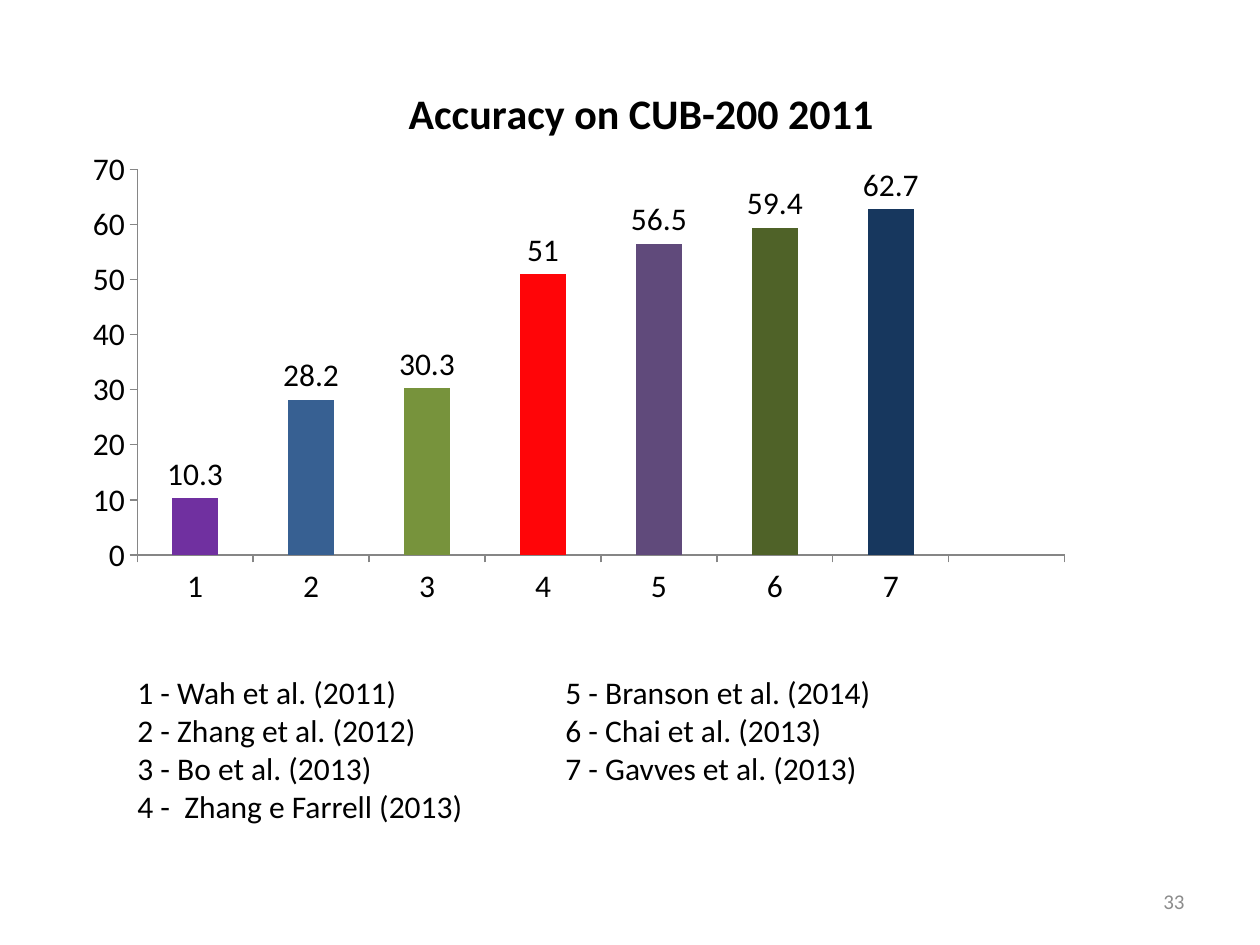
"""Build the slide that compares accuracy on CUB-200 2011."""
from dataclasses import dataclass

from lxml import etree
from pptx import Presentation
from pptx.chart.data import CategoryChartData
from pptx.dml.color import RGBColor
from pptx.enum.chart import XL_CHART_TYPE, XL_LABEL_POSITION, XL_TICK_MARK
from pptx.enum.text import MSO_ANCHOR, PP_ALIGN
from pptx.oxml.ns import qn
from pptx.util import Emu, Pt

COLUMNS = XL_CHART_TYPE.COLUMN_CLUSTERED
OUTSIDE_END = XL_LABEL_POSITION.OUTSIDE_END
TICK_OUT, TICK_NONE = XL_TICK_MARK.OUTSIDE, XL_TICK_MARK.NONE
LEFT, RIGHT = PP_ALIGN.LEFT, PP_ALIGN.RIGHT
TOP, MIDDLE = MSO_ANCHOR.TOP, MSO_ANCHOR.MIDDLE
PX_PER_INCH = 126


@dataclass(frozen=True)
class Theme:
    """Fonts, type sizes and colours of the slide."""
    font: str = "Calibri"
    title: int = 24
    body: int = 18
    small: int = 12
    ink: str = "000000"
    muted: str = "8C8C8C"
    axis: str = "868686"
    bars: tuple = ("7030A0", "376092", "77933C", "FF0508",
                   "604A7B", "4F6228", "17375E")


THEME = Theme()
ACCURACIES = (10.3, 28.2, 30.3, 51, 56.5, 59.4, 62.7)
EARLIER_METHODS = ("1 - Wah et al. (2011)", "2 - Zhang et al. (2012)",
                   "3 - Bo et al. (2013)", "4 -  Zhang e Farrell (2013)")
LATER_METHODS = ("5 - Branson et al. (2014)", "6 - Chai et al. (2013)",
                 "7 - Gavves et al. (2013)")


def px(length):
    """Turn pixels into EMU."""
    return Emu(round(length * 914400 / PX_PER_INCH))


def style_font(font, size=THEME.body, color=THEME.ink, bold=False):
    """Set the typeface, size, colour and weight of a font."""
    font.name, font.size, font.bold = THEME.font, Pt(size), bold
    font.color.rgb = RGBColor.from_string(color)


def add_text(slide, box, lines, align=LEFT, anchor=TOP, **font_format):
    """Add a text box with one paragraph per line."""
    frame = slide.shapes.add_textbox(*map(px, box)).text_frame
    frame.word_wrap = True
    frame.vertical_anchor = anchor
    frame.text = "\n".join(lines)
    for paragraph in frame.paragraphs:
        paragraph.alignment = align
        style_font(paragraph.runs[0].font, **font_format)


def set_layout(parent, index, **settings):
    """Give a chart part a manual layout."""
    for old_layout in parent.findall(qn("c:layout")):
        parent.remove(old_layout)
    layout = etree.Element(qn("c:layout"))
    manual = etree.SubElement(layout, qn("c:manualLayout"))
    for tag, value in settings.items():
        etree.SubElement(manual, qn(f"c:{tag}"), val=str(value))
    parent.insert(index, layout)


def style_axis(axis):
    """Show outward ticks and a thin grey axis line without a grid."""
    axis.has_major_gridlines = False
    axis.major_tick_mark, axis.minor_tick_mark = TICK_OUT, TICK_NONE
    axis.format.line.color.rgb = RGBColor.from_string(THEME.axis)
    axis.format.line.width = Pt(0.75)
    style_font(axis.tick_labels.font)


def style_bars(plot):
    """Colour each bar and label it with its value."""
    plot.gap_width = 150
    plot.vary_by_categories = False
    series = plot.series[0]
    series.invert_if_negative = False
    for index, color in enumerate(THEME.bars):
        fill = series.points[index].format.fill
        fill.solid()
        fill.fore_color.rgb = RGBColor.from_string(color)
    labels = series.data_labels
    labels.show_value = True
    labels.position = OUTSIDE_END
    style_font(labels.font)


def add_accuracy_chart(slide, box):
    """Add the column chart with its title, leaving the last category empty."""
    data = CategoryChartData()
    data.categories = [str(n + 1) for n in range(len(ACCURACIES))] + [""]
    data.add_series("Series 1", ACCURACIES + (None,))
    chart = slide.shapes.add_chart(COLUMNS, *map(px, box), data).chart
    style_font(chart.font)
    chart.has_legend = False
    chart.has_title = True
    title = chart.chart_title
    title.include_in_layout = False
    title.text_frame.text = "Accuracy on CUB-200 2011"
    style_font(title.text_frame.paragraphs[0].runs[0].font,
               size=THEME.title, bold=True)
    for axis in (chart.category_axis, chart.value_axis):
        style_axis(axis)
    chart.value_axis.minimum_scale, chart.value_axis.maximum_scale = 0, 70
    chart.value_axis.major_unit = 10
    style_bars(chart.plots[0])
    chart_xml = chart.element.find(qn("c:chart"))
    set_layout(chart_xml.find(qn("c:title")), 1,
               xMode="edge", yMode="edge", x=0.3, y=0.05)
    set_layout(chart_xml.find(qn("c:plotArea")), 0, layoutTarget="inner",
               xMode="edge", yMode="edge", x=0.09, y=0.155, w=0.738, h=0.442)


def main():
    """Compose and save the slide."""
    deck = Presentation()
    deck.slide_width, deck.slide_height = px(1260), px(945)
    slide = deck.slides.add_slide(deck.slide_layouts[6])
    add_accuracy_chart(slide, (24, 34, 1257, 873))
    add_text(slide, (125, 667, 798, 165), EARLIER_METHODS)
    add_text(slide, (553, 667, 669, 127), LATER_METHODS)
    add_text(slide, (903, 876, 294, 50), ["33"], align=RIGHT, anchor=MIDDLE,
             size=THEME.small, color=THEME.muted)
    deck.save("out.pptx")


if __name__ == "__main__":
    main()
